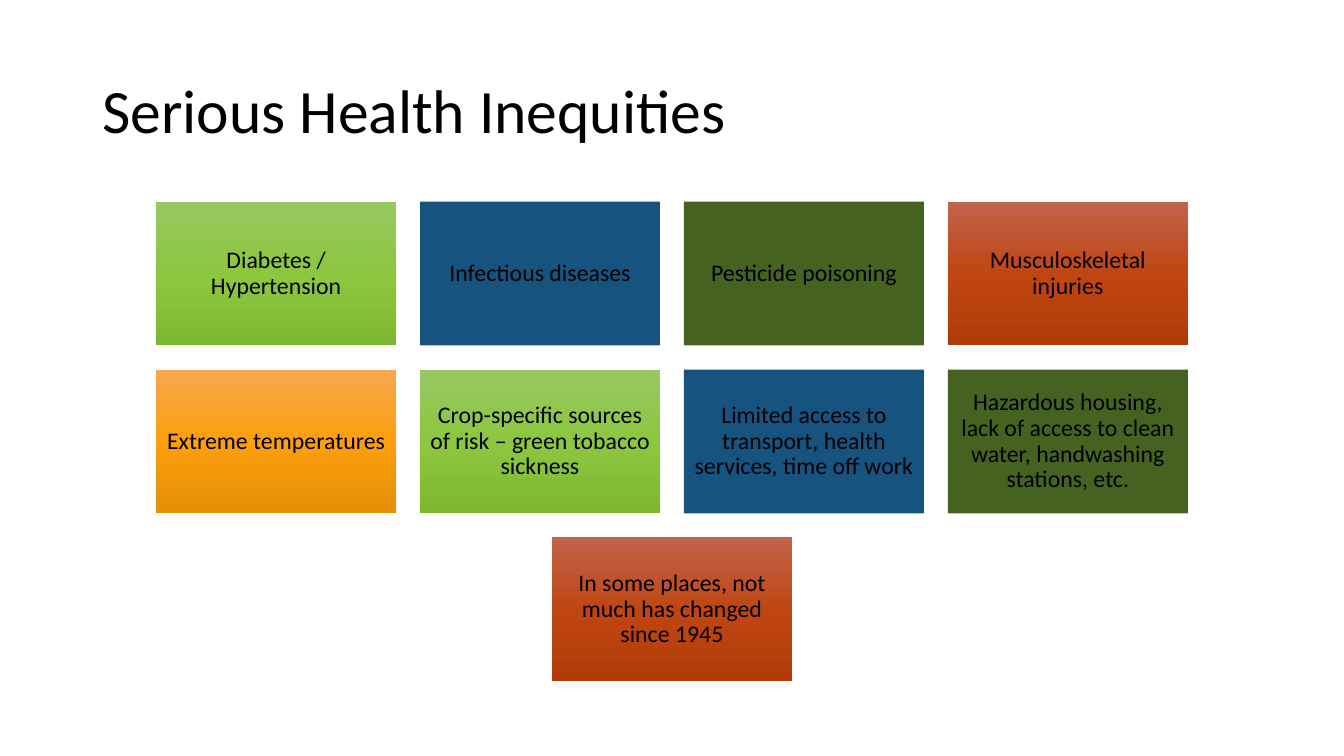
"""Build a slide of nine health inequity tiles in centred rows."""
from copy import deepcopy
from dataclasses import dataclass
from itertools import cycle

from pptx import Presentation
from pptx.dml.color import RGBColor
from pptx.dml.fill import FillFormat
from pptx.enum.shapes import MSO_SHAPE as Shape
from pptx.enum.text import MSO_ANCHOR as Anchor, MSO_AUTO_SIZE as Fit, PP_ALIGN as Align
from pptx.oxml.ns import qn
from pptx.slide import Slide
from pptx.text.text import TextFrame
from pptx.util import Pt

WIDE, HIGH = 960, 540
TILE_W, TILE_H, GAP = 171.4, 102.85, 17.1
TOP = 144
FONT = "Calibri"

GREEN = ("98C862", "8CC73F", "7DB831")
BLUE = ("16537F",)
OLIVE = ("466221",)
RUST = ("C2634D", "BF4611", "B13B08")
AMBER = ("F5A84E", "FC9F0E", "E58F07")

ROWS = (
    ("Diabetes / Hypertension", "Infectious diseases",
     "Pesticide poisoning", "Musculoskeletal injuries"),
    ("Extreme temperatures",
     "Crop-specific sources of risk – green tobacco sickness",
     "Limited access to transport, health services, time off work",
     "Hazardous housing, lack of access to clean water, handwashing stations, etc."),
    ("In some places, not much has changed since 1945",),
)


@dataclass(frozen=True)
class Tile:
    text: str
    left: float
    top: float
    tones: tuple[str, ...]


def tint(code: str) -> RGBColor:
    return RGBColor.from_string(code)


def plan() -> list[Tile]:
    tones = cycle((GREEN, BLUE, OLIVE, RUST, AMBER))
    tiles = []
    for row, texts in enumerate(ROWS):
        span = len(texts) * (TILE_W + GAP) - GAP
        start = (WIDE - span) / 2
        top = TOP + row * (TILE_H + GAP)
        for col, text in enumerate(texts):
            tiles.append(Tile(text, start + col * (TILE_W + GAP), top, next(tones)))
    return tiles


def write(frame: TextFrame, text: str, size: float, align: Align) -> None:
    frame.text = text
    frame.word_wrap = True
    frame.auto_size = Fit.NONE
    frame.vertical_anchor = Anchor.MIDDLE
    para = frame.paragraphs[0]
    para.alignment = align
    para.line_spacing = 0.9
    font = para.runs[0].font
    font.name, font.size = FONT, Pt(size)
    font.color.rgb = tint("000000")


def paint(fill: FillFormat, props, tones: tuple[str, ...]) -> None:
    if len(tones) == 1:
        fill.solid()
        fill.fore_color.rgb = tint(tones[0])
        return
    fill.gradient()
    fill.gradient_angle = 270
    stops = props.find(qn("a:gradFill")).find(qn("a:gsLst"))
    stops.append(deepcopy(stops[-1]))
    for step, (stop, tone) in enumerate(zip(fill.gradient_stops, tones)):
        stop.position = step / 2
        stop.color.rgb = tint(tone)


def draw(slide: Slide, tile: Tile) -> None:
    box = slide.shapes.add_shape(
        Shape.RECTANGLE, Pt(tile.left), Pt(tile.top), Pt(TILE_W), Pt(TILE_H))
    box.shadow.inherit = False
    box.line.fill.background()
    paint(box.fill, box._element.spPr, tile.tones)
    frame = box.text_frame
    frame.margin_left = frame.margin_right = Pt(5)
    frame.margin_top = frame.margin_bottom = Pt(5)
    write(frame, tile.text, 17, Align.CENTER)


def main() -> None:
    deck = Presentation()
    deck.slide_width, deck.slide_height = Pt(WIDE), Pt(HIGH)
    slide = deck.slides.add_slide(deck.slide_layouts.get_by_name("Title Only"))
    title = slide.shapes.title
    title.left, title.top = Pt(66), Pt(28.75)
    title.width, title.height = Pt(828), Pt(104.4)
    write(title.text_frame, "Serious Health Inequities", 44, Align.LEFT)
    for tile in plan():
        draw(slide, tile)
    deck.save("out.pptx")


if __name__ == "__main__":
    main()
